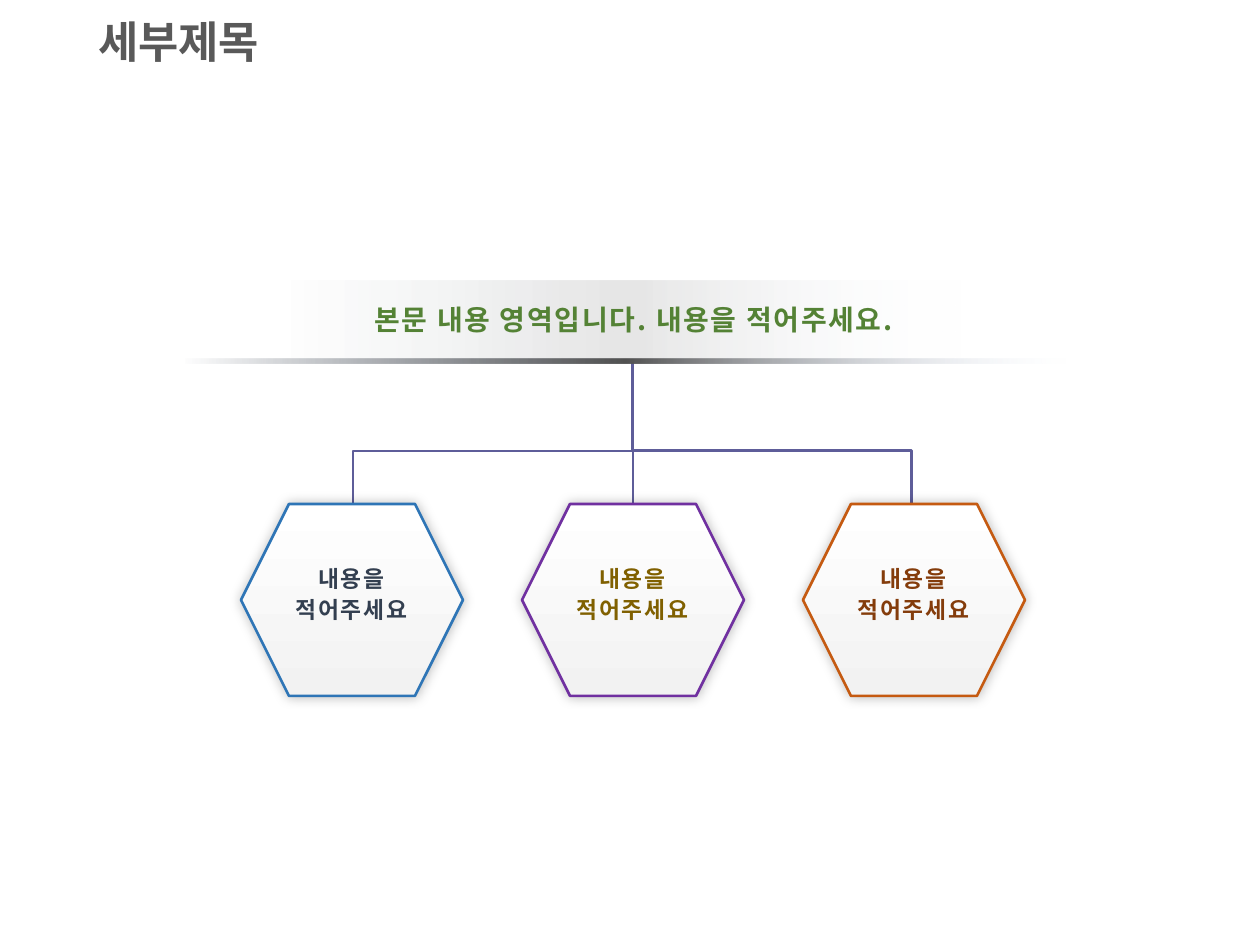
from dataclasses import dataclass

from lxml import etree
from pptx import Presentation
from pptx.dml.color import RGBColor
from pptx.enum.shapes import MSO_CONNECTOR, MSO_SHAPE
from pptx.enum.text import MSO_ANCHOR, PP_ALIGN
from pptx.oxml.ns import qn
from pptx.util import Emu, Pt

PX = 914400 // 126
RECT, HEXAGON = MSO_SHAPE.RECTANGLE, MSO_SHAPE.HEXAGON
STRAIGHT, ELBOW = MSO_CONNECTOR.STRAIGHT, MSO_CONNECTOR.ELBOW
CENTER, LEFT, MIDDLE, TOP = PP_ALIGN.CENTER, PP_ALIGN.LEFT, MSO_ANCHOR.MIDDLE, MSO_ANCHOR.TOP

KOREAN = "Noto Sans CJK KR"
GREY = RGBColor(0x59, 0x59, 0x59)
GREEN = RGBColor(0x54, 0x82, 0x35)
VIOLET = RGBColor(0x5E, 0x5D, 0x99)
BLACK = RGBColor(0, 0, 0)
WHITE = RGBColor(0xFF, 0xFF, 0xFF)
PALE_GREY = RGBColor(0xF2, 0xF2, 0xF2)
DARK_GREY = RGBColor(0x52, 0x52, 0x52)
NAVY = RGBColor(0x33, 0x3F, 0x50)
ICE = RGBColor(0xE1, 0xEB, 0xFB)
BLUE = RGBColor(0x2E, 0x75, 0xB6)
PURPLE = RGBColor(0x70, 0x30, 0xA0)
ORANGE = RGBColor(0xC5, 0x5A, 0x11)
OLIVE = RGBColor(0x80, 0x60, 0x00)
BROWN = RGBColor(0x84, 0x3C, 0x0B)


@dataclass
class Box:
    x: int
    y: int
    w: int
    h: int

    def emu(self) -> list[Emu]:
        return [Emu(v * PX) for v in (self.x, self.y, self.w, self.h)]


@dataclass
class Stop:
    pos: int
    color: RGBColor
    alpha: int = 100


@dataclass
class Branch:
    lines: list[str]
    outline: RGBColor
    ink: RGBColor


BRANCHES = [
    Branch(["내용을", "적어주세요"], BLUE, NAVY),
    Branch(["내용을", "적어주세요"], PURPLE, OLIVE),
    Branch(["내용을", "적어주세요"], ORANGE, BROWN),
]
HEX = Box(241, 504, 222, 192)
STEP = 281
TRUNK_X, TRUNK_Y, LEAF_Y = 633, 363, 663


def add_color(parent, color: RGBColor, alpha: int) -> None:
    clr = etree.SubElement(parent, qn("a:srgbClr"), val=str(color))
    if alpha < 100:
        etree.SubElement(clr, qn("a:alpha"), val=str(alpha * 1000))


def add_gradient_shape(slide, kind, box: Box, stops: list[Stop], angle: int):
    sp = slide.shapes.add_shape(kind, *box.emu())
    sp.shadow.inherit = False
    sp.line.fill.background()
    sp.fill.background()
    spPr = sp.element.spPr
    grad = etree.Element(qn("a:gradFill"), rotWithShape="1")
    gs_list = etree.SubElement(grad, qn("a:gsLst"))
    for stop in stops:
        gs = etree.SubElement(gs_list, qn("a:gs"), pos=str(stop.pos * 1000))
        add_color(gs, stop.color, stop.alpha)
    etree.SubElement(grad, qn("a:lin"), ang=str(angle * 60000), scaled="0")
    spPr.replace(spPr.find(qn("a:noFill")), grad)
    return sp


def add_glow_shadow(sp) -> None:
    effects = sp.element.spPr.find(qn("a:effectLst"))
    shadow = etree.SubElement(effects, qn("a:outerShdw"), blurRad=str(Pt(7)),
                              dist="0", dir="0", algn="ctr", rotWithShape="0")
    add_color(shadow, BLACK, 25)


def add_text(slide, box: Box, lines: list[str], size: int, color: RGBColor,
             font: str = KOREAN, align=CENTER, anchor=TOP,
             spacing=None, tracking: int = 100) -> None:
    tf = slide.shapes.add_textbox(*box.emu()).text_frame
    tf.word_wrap = True
    tf.vertical_anchor = anchor
    tf.text = "\n".join(lines)
    for p in tf.paragraphs:
        p.alignment = align
        if spacing:
            p.line_spacing = spacing
        for r in p.runs:
            r.font.name, r.font.size, r.font.bold = font, Pt(size), True
            r.font.color.rgb = color
            rPr = r.font._element
            rPr.set("spc", str(tracking))
            rPr.find(qn("a:latin")).addnext(etree.Element(qn("a:ea"), typeface=font))


def add_line(slide, kind, x1: int, y1: int, x2: int, y2: int):
    line = slide.shapes.add_connector(kind, *(Emu(v * PX) for v in (x1, y1, x2, y2)))
    line.line.color.rgb = VIOLET
    line.line.width = Pt(1.5)
    etree.SubElement(line.element.spPr, qn("a:effectLst"))
    return line


def add_elbow(slide, leaf_x: int) -> None:
    """Join a leaf to the trunk with a vertical-first elbow (a turned connector)."""
    w, h = LEAF_Y - TRUNK_Y, abs(leaf_x - TRUNK_X)
    left = (leaf_x + TRUNK_X - w) // 2
    top = (LEAF_Y + TRUNK_Y - h) // 2
    on_left = leaf_x < TRUNK_X
    start, end = (left + w, left) if on_left else (left, left + w)
    elbow = add_line(slide, ELBOW, start, top + h, end, top)
    spPr = elbow.element.spPr
    spPr.find(qn("a:xfrm")).set("rot", str((90 if on_left else 270) * 60000))
    guides = spPr.find(qn("a:prstGeom")).find(qn("a:avLst"))
    etree.SubElement(guides, qn("a:gd"), name="adj1", fmla="val 70600")


def main() -> None:
    prs = Presentation()
    prs.slide_width, prs.slide_height = Emu(1260 * PX), Emu(945 * PX)
    slide = prs.slides.add_slide(prs.slide_layouts[6])

    # Title
    add_text(slide, Box(86, 8, 1086, 72), ["세부제목"], 25, GREY, "Calibri",
             LEFT, MIDDLE, 0.9, 0)

    # Connectors
    for leaf_x in (TRUNK_X + STEP - 2, TRUNK_X - STEP + 1):
        add_elbow(slide, leaf_x)
    add_line(slide, STRAIGHT, TRUNK_X, 389, TRUNK_X, LEAF_Y - 100)

    # Header band
    add_gradient_shape(slide, RECT, Box(285, 281, 683, 77),
                       [Stop(0, NAVY, 0), Stop(50, BLACK, 10), Stop(100, ICE, 0)], 0)

    # Hexagons and their labels
    for i, branch in enumerate(BRANCHES):
        sp = add_gradient_shape(slide, HEXAGON, Box(HEX.x + i * STEP, HEX.y, HEX.w, HEX.h),
                                [Stop(0, WHITE), Stop(100, PALE_GREY)], 90)
        sp.line.color.rgb = branch.outline
        sp.line.width = Pt(1.5)
        add_glow_shadow(sp)
        add_text(slide, Box(HEX.x + 2 + i * STEP, 554, 217, 77), branch.lines, 13,
                 branch.ink, spacing=Pt(18))

    # Header rule and text
    add_gradient_shape(slide, RECT, Box(185, 359, 882, 5),
                       [Stop(0, NAVY, 0), Stop(50, DARK_GREY), Stop(100, ICE, 0)], 0)
    add_text(slide, Box(226, 296, 815, 47), ["본문 내용 영역입니다. 내용을 적어주세요."], 16, GREEN)

    prs.save("out.pptx")


if __name__ == "__main__":
    main()
